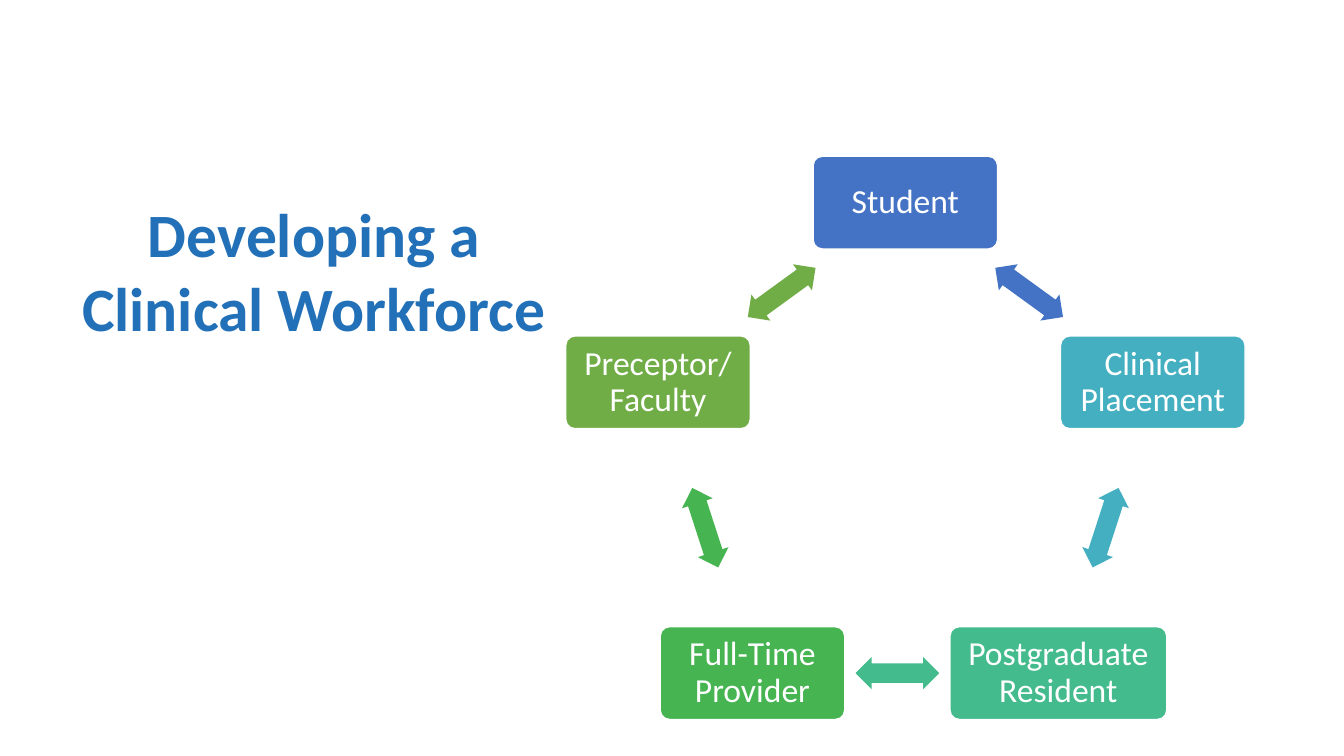
from math import cos, pi, sin

from pptx import Presentation
from pptx.dml.color import RGBColor
from pptx.enum.shapes import MSO_SHAPE
from pptx.enum.text import MSO_ANCHOR, MSO_AUTO_SIZE, PP_ALIGN
from pptx.util import Inches, Pt

COLORS = {
    "title": "2270B7",
    "white": "FFFFFF",
    "blue": "4472C4",
    "teal": "43AFC0",
    "mint": "43BB8D",
    "green": "45B451",
    "olive": "70AD47",
}
TITLE = ["Developing a ", "Clinical Workforce "]
STAGES = [
    (["Student"], "blue", 1.83, 0),
    (["Clinical Placement"], "teal", 1.83, 0),
    (["Postgraduate Resident"], "mint", 2.15, -0.08),
    (["Full-Time Provider"], "green", 1.83, 0),
    (["Preceptor/", "Faculty"], "olive", 1.83, 0),
]
MID_X, MID_Y, RADIUS = 8.98, 4.59, 2.58
BOX_H = 0.92
ARROW_W, ARROW_H = 0.83, 0.32
STEP = 360 / len(STAGES)


def color(name):
    return RGBColor.from_string(COLORS[name])


def write(shape, lines, size=24, ink="white", bold=False, inset=0.12, spacing=0.9,
          anchor=MSO_ANCHOR.MIDDLE):
    frame = shape.text_frame
    frame.word_wrap = True
    frame.auto_size = MSO_AUTO_SIZE.NONE
    frame.vertical_anchor = anchor
    frame.margin_left = frame.margin_right = Inches(inset)
    frame.text = "\n".join(lines)
    for para in frame.paragraphs:
        para.alignment = PP_ALIGN.CENTER
        para.line_spacing = spacing
        para.font.name = "Calibri"
        para.font.size = Pt(size)
        para.font.bold = bold
        para.font.color.rgb = color(ink)


def draw(slide, kind, x, y, width, height, fill):
    shape = slide.shapes.add_shape(
        kind, Inches(x - width / 2), Inches(y - height / 2), Inches(width), Inches(height))
    shape.shadow.inherit = False
    shape.fill.solid()
    shape.fill.fore_color.rgb = color(fill)
    return shape


def place(angle, radius):
    turn = angle * pi / 180
    return MID_X + radius * sin(turn), MID_Y - radius * cos(turn)


def main():
    deck = Presentation()
    deck.slide_width, deck.slide_height = Inches(13.33), Inches(7.5)
    slide = deck.slides.add_slide(deck.slide_layouts[5])

    title = slide.shapes.title
    title.left, title.top = Inches(0.27), Inches(1.89)
    title.width, title.height = Inches(5.83), Inches(1.58)
    write(title, TITLE, size=44, ink="title", bold=True, inset=0.1, spacing=1.0,
          anchor=MSO_ANCHOR.TOP)

    for i, (lines, fill, width, shift) in enumerate(STAGES):
        x, y = place(i * STEP, RADIUS)
        box = draw(slide, MSO_SHAPE.ROUNDED_RECTANGLE, x, y, width, BOX_H, fill)
        box.adjustments[0] = 0.1
        box.line.color.rgb = color("white")
        box.line.width = Pt(1)
        write(box, lines)

        angle = (i + 0.5) * STEP
        x, y = place(angle, RADIUS * cos(pi / len(STAGES)))
        arrow = draw(slide, MSO_SHAPE.LEFT_RIGHT_ARROW, x + shift, y, ARROW_W, ARROW_H, fill)
        arrow.adjustments[0] = 0.6
        arrow.adjustments[1] = 0.5
        arrow.line.fill.background()
        arrow.rotation = angle

    deck.save("out.pptx")


if __name__ == "__main__":
    main()
